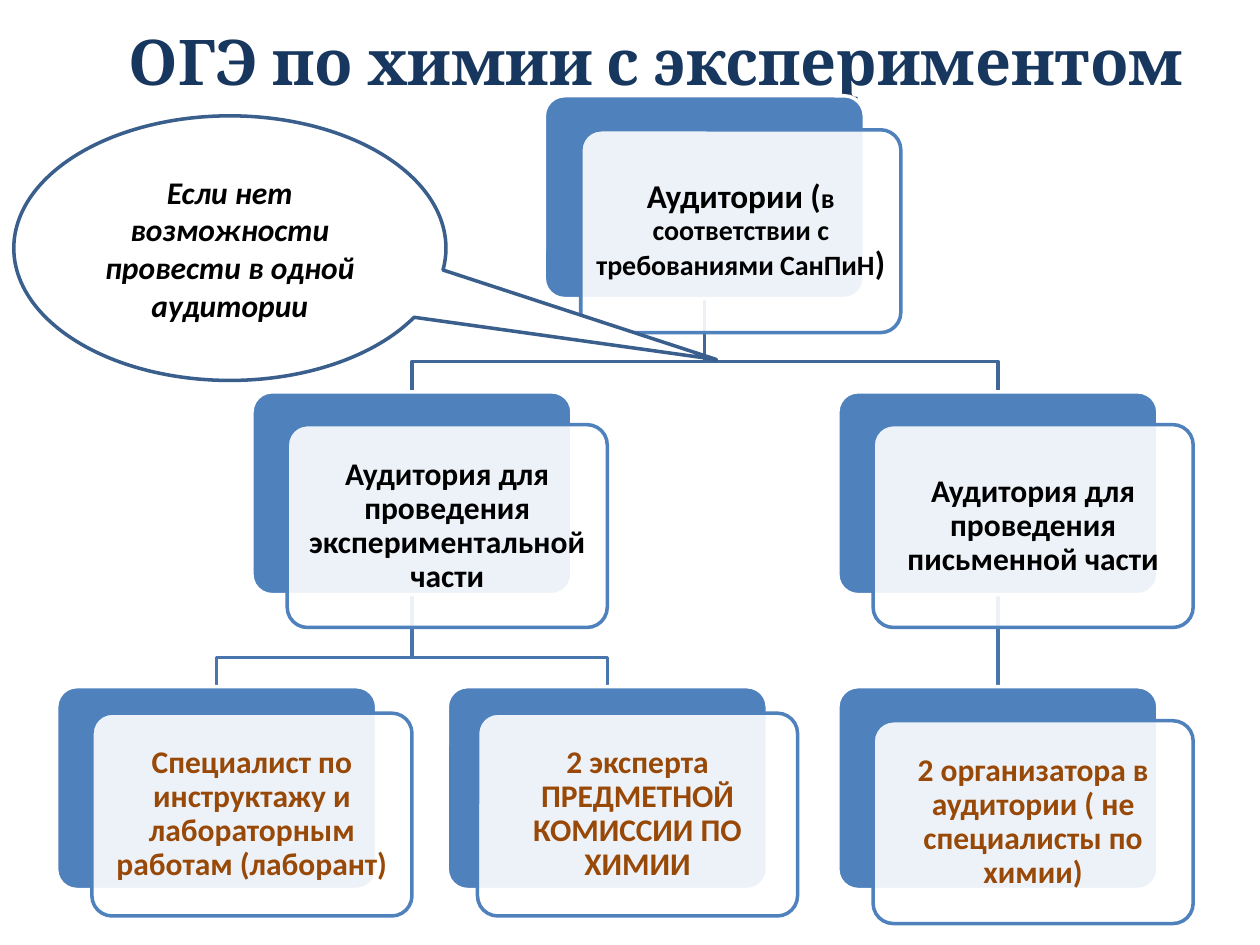
from dataclasses import dataclass

from lxml import etree
from pptx import Presentation
from pptx.dml.color import RGBColor
from pptx.enum.shapes import MSO_CONNECTOR, MSO_SHAPE
from pptx.enum.text import MSO_ANCHOR, PP_ALIGN
from pptx.oxml.ns import qn
from pptx.util import Inches, Pt

STRAIGHT = MSO_CONNECTOR.STRAIGHT
ROUNDED = MSO_SHAPE.ROUNDED_RECTANGLE
CALLOUT = MSO_SHAPE.OVAL_CALLOUT
MIDDLE = MSO_ANCHOR.MIDDLE
CENTER = PP_ALIGN.CENTER


@dataclass(frozen=True)
class Theme:
    """Colours, fonts and sizes of the slide."""
    blue: str = "4F81BD"
    top_link: str = "3F6797"
    low_link: str = "4875AC"
    callout: str = "3A5F8C"
    white: str = "FFFFFF"
    black: str = "000000"
    brown: str = "984807"
    navy: str = "17375E"
    body_font: str = "Calibri"
    title_font: str = "Cambria"
    title: int = 36
    root: int = 19
    body: int = 18
    note: int = 16
    line: int = 2


@dataclass(frozen=True)
class Run:
    """A piece of text with its format."""
    text: str
    size: int
    color: str
    font: str
    italic: bool = False


@dataclass(frozen=True)
class Card:
    """A node of the chart: back plate position, text and front offset."""
    left: float
    top: float
    runs: tuple[Run, ...]
    dx: float = 0.28
    dy: float = 0.26

    @property
    def mid(self) -> float:
        """Horizontal centre of the back plate."""
        return self.left + CARD_W / 2


T = Theme()
CARD_W, CARD_H = 2.54, 1.61
LINK_DROP, LINK_BEND = 0.74, 0.5
ROW_1, ROW_2, ROW_3 = 0.76, 3.11, 5.45


def body_run(text: str, color: str = T.black, size: int = T.body, italic: bool = False) -> Run:
    """Make a run in the body font."""
    return Run(text, size, color, T.body_font, italic)


ROOT = Card(4.32, ROW_1, (
    body_run("Аудитории (", size=T.root),
    body_run("в соответствии с требованиями СанПиН", size=T.note),
    body_run(")", size=T.root)), dx=0.29, dy=0.27)
LAB = Card(2, ROW_2, (body_run("Аудитория для проведения экспериментальной части"),))
WRITTEN = Card(6.65, ROW_2, (body_run("Аудитория для проведения письменной части"),))
ASSISTANT = Card(0.45, ROW_3, (body_run(
    "Специалист по инструктажу и лабораторным работам (лаборант)", T.brown),), dy=0.21)
EXPERTS = Card(3.55, ROW_3, (body_run(
    "2 эксперта ПРЕДМЕТНОЙ КОМИССИИ ПО ХИМИИ", T.brown),), dx=0.24, dy=0.21)
ORGANIZERS = Card(6.65, ROW_3, (body_run(
    "2 организатора в аудитории ( не специалисты по химии)", T.brown),), dy=0.27)
CARDS = (ROOT, LAB, ASSISTANT, EXPERTS, WRITTEN, ORGANIZERS)
LINKS = (
    (WRITTEN, ORGANIZERS, T.low_link),
    (ROOT, WRITTEN, T.top_link),
    (LAB, EXPERTS, T.low_link),
    (LAB, ASSISTANT, T.low_link),
    (ROOT, LAB, T.top_link),
)


def set_line(s, color: str) -> None:
    """Give an outline its colour and width."""
    s.line.color.rgb = RGBColor.from_string(color)
    s.line.width = Pt(T.line)


def add_text(s, runs: tuple[Run, ...], spacing: float = 1.0, inset: float | None = None) -> None:
    """Write bold centred runs into a shape."""
    tf = s.text_frame
    frame = {"word_wrap": True, "vertical_anchor": MIDDLE}
    if inset is not None:
        frame |= {f"margin_{side}": Inches(inset) for side in ("left", "top", "right", "bottom")}
    for name, value in frame.items():
        setattr(tf, name, value)
    p = tf.paragraphs[0]
    p.alignment, p.line_spacing = CENTER, spacing
    for run in runs:
        r = p.add_run()
        r.text = run.text
        style = {"name": run.font, "size": Pt(run.size), "bold": True, "italic": run.italic}
        for name, value in style.items():
            setattr(r.font, name, value)
        r.font.color.rgb = RGBColor.from_string(run.color)


def add_filled(slide, kind, box: tuple[float, ...], fill: str, line: str, adj: tuple[float, ...]):
    """Add a preset shape with fill, outline and adjustments."""
    s = slide.shapes.add_shape(kind, *map(Inches, box))
    s.shadow.inherit = False
    s.fill.solid()
    s.fill.fore_color.rgb = RGBColor.from_string(fill)
    set_line(s, line)
    for i, value in enumerate(adj):
        s.adjustments[i] = value
    return s


def add_link(slide, parent: Card, child: Card, color: str) -> None:
    """Join a parent to its child with a straight or bent line."""
    top = parent.top + CARD_H
    end = top + LINK_DROP
    if parent.mid == child.mid:
        s = slide.shapes.add_connector(
            STRAIGHT, *map(Inches, (parent.mid, top, child.mid, end)))
        etree.SubElement(s._element.spPr, qn("a:effectLst"))
    else:
        bend = top + LINK_BEND
        points = ((parent.mid, bend), (child.mid, bend), (child.mid, end))
        builder = slide.shapes.build_freeform(Inches(parent.mid), Inches(top))
        builder.add_line_segments([(Inches(x), Inches(y)) for x, y in points], close=False)
        s = builder.convert_to_shape()
        s.shadow.inherit = False
        s.fill.background()
    set_line(s, color)


def add_card(slide, card: Card) -> None:
    """Draw a back plate and its translucent front with text."""
    add_filled(slide, ROUNDED, (card.left, card.top, CARD_W, CARD_H), T.blue, T.white, (0.1,))
    front = (card.left + card.dx, card.top + card.dy, CARD_W, CARD_H)
    s = add_filled(slide, ROUNDED, front, T.white, T.blue, (0.1,))
    color = s._element.spPr.find(qn("a:solidFill"))[0]
    etree.SubElement(color, qn("a:alpha"), val="90000")
    add_text(s, card.runs, spacing=0.9, inset=0.07)


def main() -> None:
    """Build and save the slide."""
    prs = Presentation()
    prs.slide_width, prs.slide_height = Inches(10), Inches(7.5)
    slide = prs.slides.add_slide(prs.slide_layouts[6])
    title = slide.shapes.add_textbox(*map(Inches, (0.71, 0.02, 9, 0.92)))
    add_text(title, (Run("ОГЭ по химии с экспериментом", T.title, T.navy, T.title_font),))
    for parent, child, color in LINKS:
        add_link(slide, parent, child, color)
    for card in CARDS:
        add_card(slide, card)
    callout = add_filled(
        slide, CALLOUT, (0.11, 0.92, 3.43, 2.1), T.white, T.callout, (1.126, 0.421))
    add_text(callout, (body_run("Если нет возможности провести в одной аудитории", italic=True),))
    prs.save("out.pptx")


if __name__ == "__main__":
    main()
